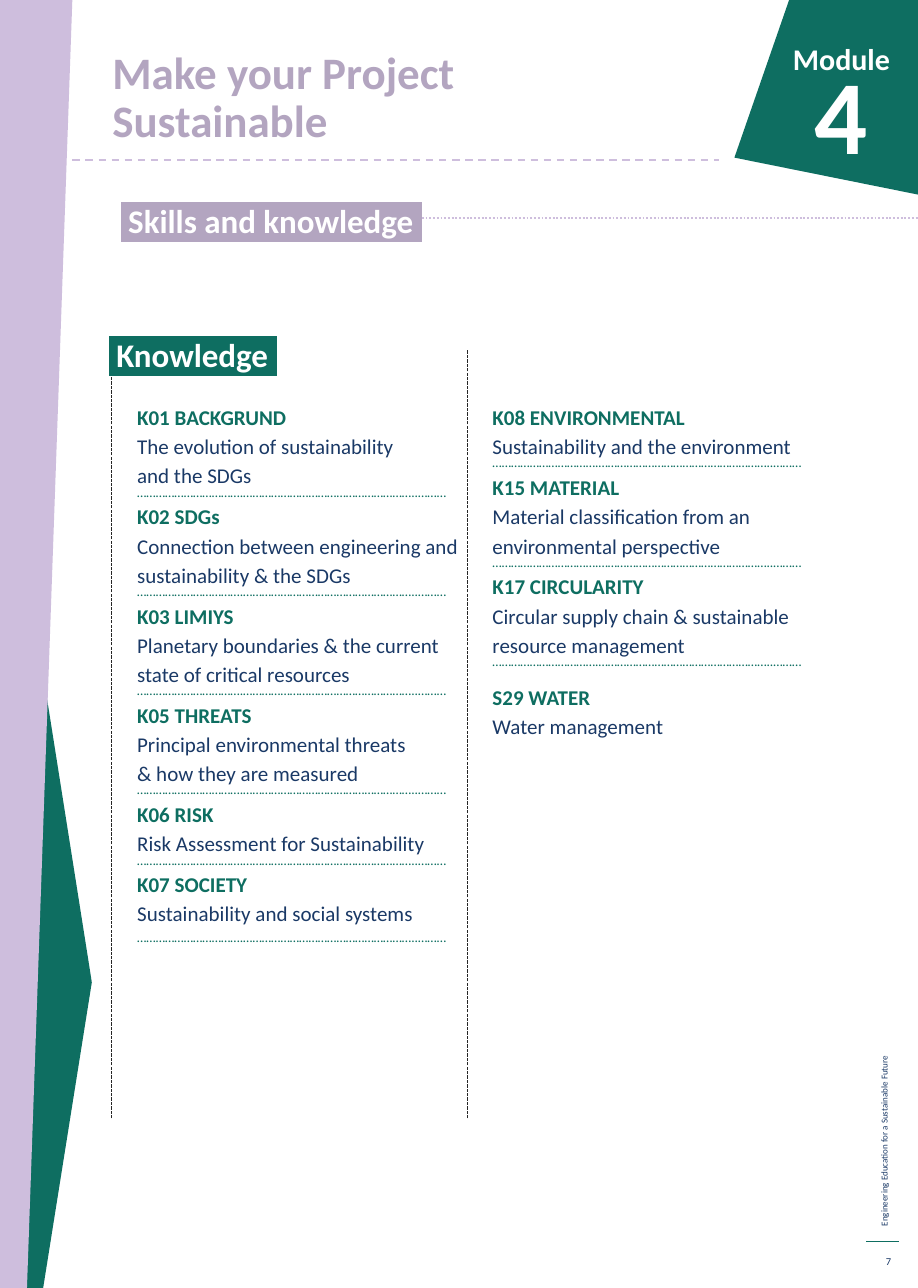
from lxml import etree
from pptx import Presentation
from pptx.dml.color import RGBColor
from pptx.enum.dml import MSO_LINE_DASH_STYLE as Dash
from pptx.enum.shapes import MSO_CONNECTOR
from pptx.enum.text import MSO_ANCHOR as Anchor, MSO_AUTO_SIZE, PP_ALIGN as Align
from pptx.oxml.ns import qn
from pptx.util import Inches, Pt

GREEN = RGBColor(0x0E, 0x6E, 0x61)
LILAC = RGBColor(0xCE, 0xBE, 0xDD)
MAUVE = RGBColor(0xB3, 0xA5, 0xC0)
NAVY = RGBColor(0x1A, 0x39, 0x66)
BLACK = RGBColor(0x26, 0x26, 0x26)
WHITE = RGBColor(0xFF, 0xFF, 0xFF)
DOTS = "…………………………….………………………………………………..………"


def write(paragraph, text, size, color, bold=False, align=Align.LEFT, spacing=1.0, highlight=None):
    paragraph.alignment = align
    paragraph.line_spacing = spacing
    paragraph.space_before = Pt(0)
    run = paragraph.add_run()
    run.text = text
    run.font.size = Pt(size)
    run.font.bold = bold
    run.font.color.rgb = color
    run.font.name = "Calibri"
    if highlight is not None:
        mark = etree.Element(qn("a:highlight"))
        etree.SubElement(mark, qn("a:srgbClr"), val=str(highlight))
        run.font._element.find(qn("a:solidFill")).addnext(mark)


def place(shape, left, top, width, height, anchor=Anchor.TOP):
    shape.left, shape.top = Inches(left), Inches(top)
    shape.width, shape.height = Inches(width), Inches(height)
    frame = shape.text_frame
    frame.word_wrap = True
    frame.auto_size = MSO_AUTO_SIZE.NONE
    frame.vertical_anchor = anchor
    return frame


prs = Presentation()
prs.slide_width, prs.slide_height = Inches(8.5), Inches(11.93)
slide = prs.slides.add_slide(prs.slide_layouts[3])
shapes = slide.shapes

outlines = [
    (GREEN, [(0.4, 11.93), (0.23, 11.93), (0.23, 5.17), (0.83, 8.97), (0.85, 9.1)]),
    (LILAC, [(0, 0), (0.67, 0), (0.25, 11.93), (0, 11.93)]),
    (GREEN, [(8.55, -0.01), (7.31, -0.01), (6.8, 1.46), (8.54, 1.81)]),
]
for color, corners in outlines:
    points = [(Inches(x), Inches(y)) for x, y in corners]
    builder = shapes.build_freeform(*points[0], scale=1.0)
    builder.add_line_segments(points[1:], close=True)
    panel = builder.convert_to_shape()
    panel.shadow.inherit = False
    panel.fill.solid()
    panel.fill.fore_color.rgb = color
    panel.line.fill.background()

rules = [
    (8.02, 11.5, 8.32, 11.5, GREEN, 0.75, Dash.SOLID),
    (0.67, 1.48, 6.66, 1.48, LILAC, 1.25, Dash.DASH),
    (1.03, 10.36, 1.03, 3.24, BLACK, 0.75, Dash.SQUARE_DOT),
    (4.33, 10.36, 4.33, 3.24, BLACK, 0.75, Dash.SQUARE_DOT),
    (2.52, 2.02, 8.5, 2.02, LILAC, 1.25, Dash.ROUND_DOT),
]
for x1, y1, x2, y2, color, weight, dash in rules:
    rule = shapes.add_connector(
        MSO_CONNECTOR.STRAIGHT, Inches(x1), Inches(y1), Inches(x2), Inches(y2))
    rule.line.color.rgb = color
    rule.line.width = Pt(weight)
    rule.line.dash_style = dash
    etree.SubElement(rule._element.spPr, qn("a:effectLst"))

title = place(shapes.title, 0.94, 0.4, 3.96, 1.01, Anchor.BOTTOM)
write(title.paragraphs[0], "Make your Project Sustainable", 30, MAUVE, bold=True, spacing=0.89)

labels = [
    ("Module", (6.54, 0.33, 1.8, 1.42), 20, WHITE, True, Align.RIGHT, Anchor.TOP, 0),
    ("4", (6.33, 0.41, 1.8, 1.42), 70, WHITE, True, Align.RIGHT, Anchor.TOP, 0),
    ("7", (8.02, 11.54, 0.33, 0.29), 7, NAVY, False, Align.RIGHT, Anchor.MIDDLE, 0),
    ("Engineering Education for a Sustainable Future", (5.94, 9.11, 4.49, 0.2),
     6, NAVY, False, Align.LEFT, Anchor.TOP, 270),
]
for text, box, size, color, bold, align, anchor, rotation in labels:
    label = shapes.add_textbox(0, 0, 0, 0)
    label.rotation = rotation
    frame = place(label, *box, anchor)
    write(frame.paragraphs[0], text, size, color, bold=bold, align=align)

headings = [
    (" Skills and knowledge", ".", (1.02, 1.85, 6.64, 0.65), MAUVE, 0.9),
    (" Knowledge", ":", (0.91, 3.05, 2.96, 0.65), GREEN, 1.0),
]
for text, ending, box, color, spacing in headings:
    heading = place(shapes.add_textbox(0, 0, 0, 0), *box).paragraphs[0]
    for part, ink in [(text, WHITE), (ending, color)]:
        write(heading, part, 22, ink, bold=True, spacing=spacing, highlight=color)

columns = [
    (1, (1.16, 3.66, 3.29, 7.84), [
        ("K01 BACKGRUND", "The evolution of sustainability", "and the SDGs"),
        ("K02 SDGs", "Connection between engineering and", "sustainability & the SDGs"),
        ("K03 LIMIYS", "Planetary boundaries & the current", "state of critical resources"),
        ("K05 THREATS", "Principal environmental threats", "& how they are measured"),
        ("K06 RISK", "Risk Assessment for Sustainability"),
        ("K07 SOCIETY", "Sustainability and social systems"),
    ]),
    (2, (4.45, 3.66, 3.29, 4.44), [
        ("K08 ENVIRONMENTAL", "Sustainability and the environment"),
        ("K15 MATERIAL", "Material classification from an", "environmental perspective"),
        ("K17 CIRCULARITY", "Circular supply chain & sustainable", "resource management"),
        ("S29 WATER", "Water management"),
    ]),
]
for index, box, topics in columns:
    frame = place(slide.placeholders[index], *box)
    rows = []
    for code, *description in topics:
        rows.append((code, 14, GREEN, True, Align.JUSTIFY, 1.6 if code == "S29 WATER" else 1.16))
        rows += [(line, 14, NAVY, False, Align.JUSTIFY, 1.16) for line in description]
        if code == "K07 SOCIETY":
            rows.append((DOTS, 9, GREEN, False, Align.JUSTIFY, 1.16))
        elif code != "S29 WATER":
            rows.append((DOTS, 9, GREEN, False, Align.LEFT, Pt(7.8)))
    for number, (text, size, color, bold, align, spacing) in enumerate(rows):
        paragraph = frame.add_paragraph() if number else frame.paragraphs[0]
        write(paragraph, text, size, color, bold=bold, align=align, spacing=spacing)
        properties = paragraph._p.get_or_add_pPr()
        properties.set("marL", str(Inches(0.01)))
        properties.set("indent", "0")
        etree.SubElement(properties, qn("a:buNone"))

prs.save("out.pptx")
